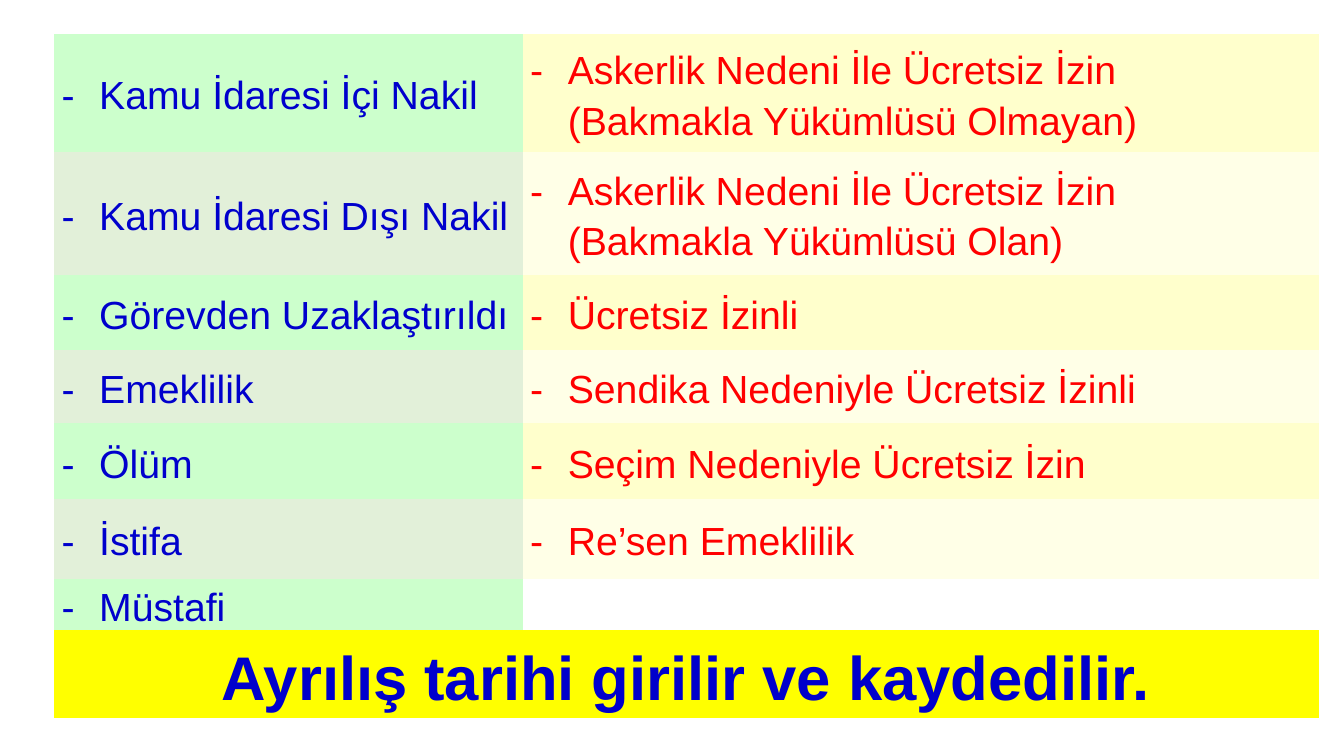
from dataclasses import dataclass

from lxml.etree import SubElement
from pptx import Presentation
from pptx.dml.color import RGBColor
from pptx.enum.text import MSO_ANCHOR, PP_ALIGN
from pptx.oxml.ns import qn
from pptx.util import Cm, Pt

PLAIN_TABLE_STYLE = "{2D5ABB26-0587-4C30-8999-92F81FD0307C}"
BLUE, RED, YELLOW = "0000CC", "FF0000", "FFFF00"
HANGING_INDENT = Cm(0.95)


@dataclass
class ReasonColumn:
    width: float
    color: str
    fills: tuple[str, str]
    reasons: list[str]


COLUMNS = [
    ReasonColumn(11.81, BLUE, ("CCFFCC", "E2F0D9"), [
        "Kamu İdaresi İçi Nakil",
        "Kamu İdaresi Dışı Nakil",
        "Görevden Uzaklaştırıldı",
        "Emeklilik",
        "Ölüm",
        "İstifa",
        "Müstafi",
    ]),
    ReasonColumn(20.05, RED, ("FFFFCC", "FFFFE7"), [
        "Askerlik Nedeni İle Ücretsiz İzin (Bakmakla Yükümlüsü Olmayan)",
        "Askerlik Nedeni İle Ücretsiz İzin (Bakmakla Yükümlüsü Olan)",
        "Ücretsiz İzinli",
        "Sendika Nedeniyle Ücretsiz İzinli",
        "Seçim Nedeniyle Ücretsiz İzin",
        "Re’sen Emeklilik",
    ]),
]
ROW_HEIGHTS = [2.97, 3.1, 1.88, 1.86, 1.91, 2, 1.3, 2.22]


def rgb(color: str) -> RGBColor:
    return RGBColor.from_string(color)


def add_dash(paragraph) -> None:
    properties = paragraph._p.get_or_add_pPr()
    properties.set("marL", str(HANGING_INDENT))
    properties.set("indent", str(-HANGING_INDENT))
    SubElement(properties, qn("a:buFont")).set("typeface", "Arial")
    SubElement(properties, qn("a:buChar")).set("char", "-")


def fill_cell(cell, text: str, fill: str, color: str, size: int, bulleted: bool = True) -> None:
    cell.fill.solid()
    cell.fill.fore_color.rgb = rgb(fill)
    cell.vertical_anchor = MSO_ANCHOR.MIDDLE
    cell.margin_left = cell.margin_right = Cm(0.18)
    cell.margin_top = cell.margin_bottom = 0
    cell.text = text
    paragraph = cell.text_frame.paragraphs[0]
    if bulleted:
        add_dash(paragraph)
    else:
        paragraph.alignment = PP_ALIGN.CENTER
    paragraph.line_spacing = 1.15
    font = paragraph.font
    font.name, font.size, font.bold = "Arial", Pt(size), not bulleted
    font.color.rgb = rgb(color)


def add_reason_table(slide) -> None:
    width = sum(column.width for column in COLUMNS)
    frame = slide.shapes.add_table(
        len(ROW_HEIGHTS), len(COLUMNS), Cm(1.37), Cm(0.86), Cm(width), Cm(sum(ROW_HEIGHTS)))
    frame.element.xpath(".//a:tableStyleId")[0].text = PLAIN_TABLE_STYLE
    table = frame.table
    table.first_row = table.horz_banding = False
    for row, height in zip(table.rows, ROW_HEIGHTS):
        row.height = Cm(height)

    # Reasons for leaving, in alternating shades
    for column_index, column in enumerate(COLUMNS):
        table.columns[column_index].width = Cm(column.width)
        for row_index, reason in enumerate(column.reasons):
            fill_cell(table.cell(row_index, column_index), reason,
                      column.fills[row_index % 2], column.color, 28)

    # Closing instruction across both columns
    last_row = len(ROW_HEIGHTS) - 1
    closing = table.cell(last_row, 0)
    closing.merge(table.cell(last_row, len(COLUMNS) - 1))
    fill_cell(closing, "Ayrılış tarihi girilir ve kaydedilir.", YELLOW, BLUE, 44, bulleted=False)


def main() -> None:
    presentation = Presentation()
    presentation.slide_width, presentation.slide_height = Cm(33.87), Cm(19.05)
    slide = presentation.slides.add_slide(presentation.slide_layouts[6])
    add_reason_table(slide)
    presentation.save("out.pptx")


if __name__ == "__main__":
    main()
